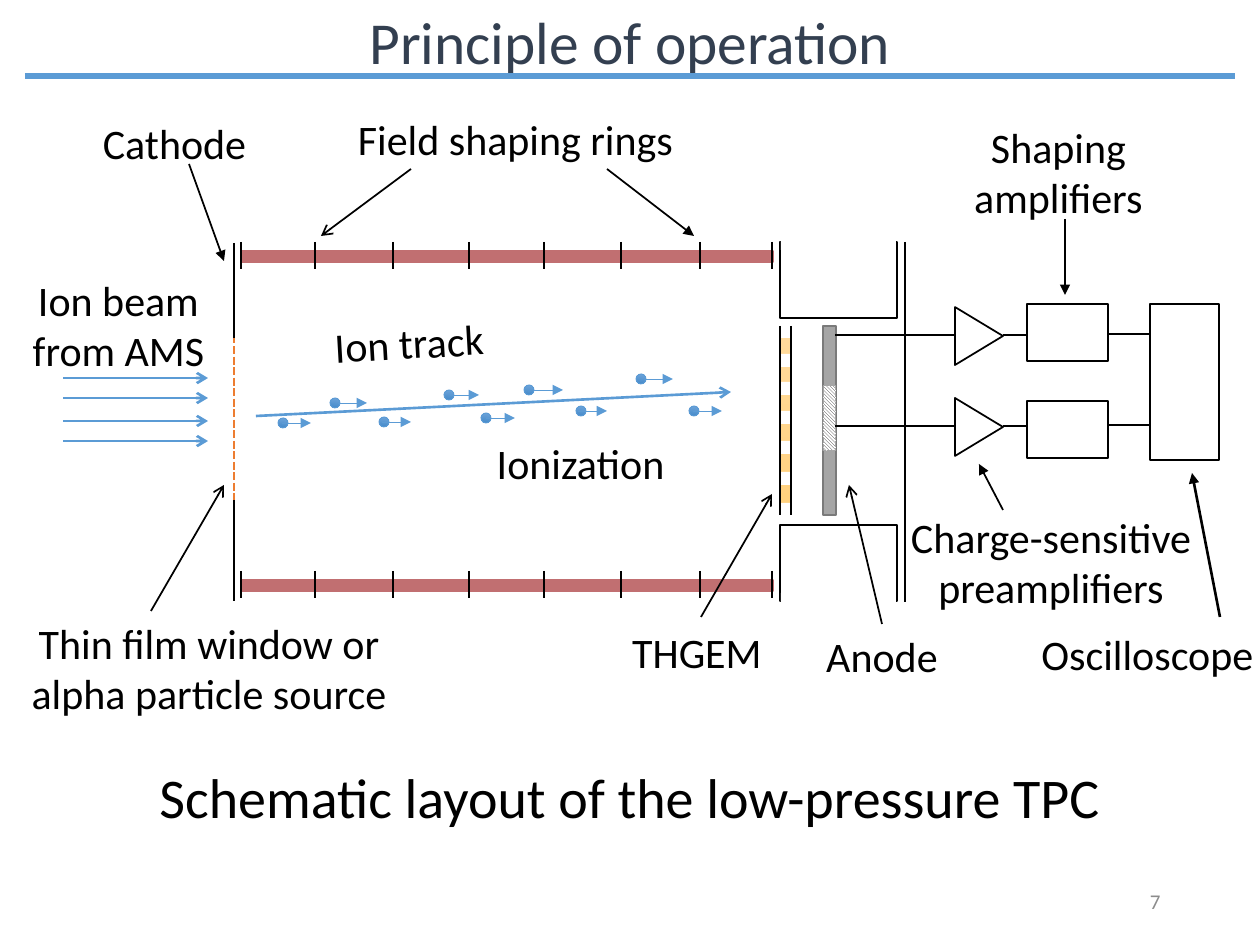
import pptx
import pptx.util
import pptx.dml.color
import pptx.enum.dml
import pptx.enum.shapes
import pptx.enum.text
import pptx.oxml.ns
from lxml import etree

RGB = pptx.dml.color.RGBColor
BLACK = RGB(0x00, 0x00, 0x00)
WHITE = RGB(0xFF, 0xFF, 0xFF)
SLATE = RGB(0x33, 0x3F, 0x50)
BLUE = RGB(0x5B, 0x9B, 0xD5)
ORANGE = RGB(0xED, 0x7D, 0x31)
RED = RGB(0xC1, 0x6F, 0x71)
GRAY = RGB(0xA5, 0xA5, 0xA5)
EDGE = RGB(0x7A, 0x7A, 0x7A)
HATCH = RGB(0x3B, 0x38, 0x38)
PALE = RGB(0x8C, 0x8C, 0x8C)
GOLD = (RGB(0xFF, 0xDB, 0x9E), RGB(0xFF, 0xD0, 0x7C))
SKY = (RGB(0x71, 0xA6, 0xDB), RGB(0x44, 0x8A, 0xCA))

FONT = "Calibri"
FORM = pptx.enum.shapes.MSO_SHAPE
DASH = pptx.enum.dml.MSO_LINE.SQUARE_DOT
ALIGN = pptx.enum.text.PP_ALIGN
ANCHOR = pptx.enum.text.MSO_ANCHOR
FIT = pptx.enum.text.MSO_AUTO_SIZE


def px(n):
    return pptx.util.Emu(round(n * 914400 / 126))


def add_end(parent, tag, **attrs):
    etree.SubElement(parent, pptx.oxml.ns.qn(tag), **attrs)


def draw_line(slide, x1, y1, x2, y2, color=BLACK, width=1, head=None, dash=None):
    line = slide.shapes.add_connector(
        pptx.enum.shapes.MSO_CONNECTOR.STRAIGHT, px(x1), px(y1), px(x2), px(y2))
    line.line.color.rgb = color
    line.line.width = pptx.util.Pt(width)
    if dash:
        line.line.dash_style = dash
    if head:
        add_end(line.line._get_or_add_ln(), "a:tailEnd", type=head)
    add_end(line._element.spPr, "a:effectLst")
    return line


def draw_shape(slide, form, x, y, w, h, fill=WHITE, edge=None, width=1, turn=0):
    """A pair of colours as fill makes a gradient from top to bottom."""
    shape = slide.shapes.add_shape(form, px(x), px(y), px(w), px(h))
    shape.shadow.inherit = False
    shape.rotation = turn
    if isinstance(fill, RGB):
        shape.fill.solid()
        shape.fill.fore_color.rgb = fill
    else:
        shape.fill.gradient()
        shape.fill.gradient_angle = 270
        for stop, color in zip(shape.fill.gradient_stops, fill):
            stop.color.rgb = color
    if edge is None:
        shape.line.fill.background()
    else:
        shape.line.color.rgb = edge
        shape.line.width = pptx.util.Pt(width)
    return shape


def set_text(frame, text, size, color=BLACK, align=ALIGN.CENTER):
    frame.text = text
    frame.word_wrap = True
    for para in frame.paragraphs:
        para.alignment = align
        for run in para.runs:
            run.font.name = FONT
            run.font.size = pptx.util.Pt(size)
            run.font.color.rgb = color


def add_label(slide, text, x, y, w, h, size=24, turn=0):
    box = slide.shapes.add_textbox(px(x), px(y), px(w), px(h))
    set_text(box.text_frame, text, size)
    box.text_frame.auto_size = FIT.SHAPE_TO_FIT_TEXT
    box.rotation = turn


def add_title(slide):
    title = slide.shapes.title
    title.left, title.top, title.width, title.height = px(0), px(-1), px(1260), px(84)
    set_text(title.text_frame, "Principle of operation", 34, SLATE)
    title.text_frame.vertical_anchor = ANCHOR.MIDDLE
    draw_line(slide, 25, 76, 1235, 76, BLUE, 3)


def draw_field(slide):
    # Cathode with its thin window
    draw_line(slide, 234, 262, 234, 590, ORANGE, 1.5, dash=DASH)
    for top, bottom in ((243, 338), (500, 601)):
        draw_line(slide, 234, top, 234, bottom, width=1.5)
    # Field shaping rings
    for top in (251, 580):
        draw_shape(slide, FORM.RECTANGLE, 241, top, 532, 11, RED, RED)
        for x in (241, 315, 393, 469, 544, 621, 700, 772):
            draw_line(slide, x, top - 9, x, top + 18, width=1.5)
    # Ion beam
    for y in (378, 398, 421, 441):
        draw_line(slide, 63, y, 208, y, BLUE, 1.5, "arrow")


def draw_track(slide):
    draw_line(slide, 256, 416, 731, 392, BLUE, 1.5, "arrow")
    # Dot left, dot top, arrow tip
    drift = ((278, 418, 311), (330, 398, 367), (379, 417, 411),
             (444, 390, 479), (481, 413, 515), (524, 385, 563),
             (576, 406, 607), (636, 374, 673), (689, 406, 722))
    for x, y, tip in drift:
        draw_shape(slide, FORM.OVAL, x, y, 10, 10, SKY, BLUE, 0.5, 4.7)
        draw_line(slide, tip - 29, y + 5, tip, y + 5, BLUE, 0.5, "triangle")


def draw_readout(slide):
    # Perforated multiplier
    draw_shape(slide, FORM.RECTANGLE, 780, 326, 11, 189, GOLD)
    for y in (325, 354, 382, 411, 441, 472, 503):
        draw_shape(slide, FORM.RECTANGLE, 780, y, 11, 13)
    for x in (780, 791):
        draw_line(slide, x, 326, x, 515)

    # Anode with its hatched pad
    draw_shape(slide, FORM.RECTANGLE, 823, 326, 13, 189, GRAY, EDGE)
    pad = draw_shape(slide, FORM.RECTANGLE, 823, 386, 13, 65, WHITE, GRAY, 0.5)
    pad.fill.patterned()
    pad.fill.pattern = pptx.enum.dml.MSO_PATTERN.LIGHT_DOWNWARD_DIAGONAL
    pad.fill.fore_color.rgb = HATCH
    pad.fill.back_color.rgb = WHITE
    pad.line.dash_style = DASH

    # Back plate and the open frames
    draw_line(slide, 905, 242, 905, 602, width=1.5)
    for top, cover in ((242, 241), (525, 593)):
        draw_shape(slide, FORM.RECTANGLE, 780, top, 117, 76, WHITE, BLACK, 1.5)
        draw_shape(slide, FORM.RECTANGLE, 781, cover, 115, 9)

    # Two amplifier chains into the oscilloscope
    draw_shape(slide, FORM.RECTANGLE, 1150, 304, 69, 156, WHITE, BLACK)
    for y, top in ((335, 304), (426, 401)):
        draw_line(slide, 835, y, 955, y, width=1.5)
        draw_shape(slide, FORM.ISOSCELES_TRIANGLE, 950, y - 23, 58, 48,
                   WHITE, BLACK, turn=90)
        draw_shape(slide, FORM.RECTANGLE, 1027, top, 81, 57, WHITE, BLACK)
        draw_line(slide, 1003, y, 1027, y)
        draw_line(slide, 1108, y - 1, 1150, y - 1)


def add_labels(slide):
    labels = (
        ("Ion beam from AMS", 4, 268, 229, 115),
        ("Thin film window or alpha particle source", -1, 611, 420, 115),
        ("Field shaping rings", 270, 107, 491, 63),
        ("Ionization", 471, 431, 219, 63),
        ("THGEM", 614, 620, 166, 63),
        ("Anode", 799, 624, 166, 63),
        ("Charge-sensitive\npreamplifiers", 879, 505, 344, 115),
        ("Cathode", 78, 111, 193, 63),
        ("Shaping amplifiers", 914, 115, 289, 115),
        ("Oscilloscope", 1003, 622, 289, 63),
    )
    for label in labels:
        add_label(slide, *label)
    add_label(slide, "Ion track", 263, 311, 292, 63, turn=356.7)
    add_label(slide, "Schematic layout of the low-pressure TPC", 0, 756, 1260, 81, 32)

    # Pointers from labels to parts
    for ends in ((151, 611, 224, 485), (411, 169, 321, 236),
                 (701, 617, 772, 494), (882, 624, 849, 485)):
        draw_line(slide, *ends, head="arrow")
    for ends in ((189, 164, 224, 261), (607, 169, 694, 236),
                 (1003, 510, 979, 464), (1065, 219, 1065, 295)):
        draw_line(slide, *ends, head="triangle")
    draw_line(slide, 1220, 617, 1192, 473, width=1.5, head="triangle")


def add_number(slide):
    box = slide.shapes.add_textbox(px(890), px(876), px(283), px(50))
    set_text(box.text_frame, "7", 12, PALE, ALIGN.RIGHT)
    box.text_frame.vertical_anchor = ANCHOR.MIDDLE


def main():
    deck = pptx.Presentation()
    deck.slide_width, deck.slide_height = px(1260), px(945)
    slide = deck.slides.add_slide(deck.slide_layouts[5])
    add_title(slide)
    draw_field(slide)
    draw_readout(slide)
    draw_track(slide)
    add_labels(slide)
    add_number(slide)
    deck.save("out.pptx")


if __name__ == "__main__":
    main()
